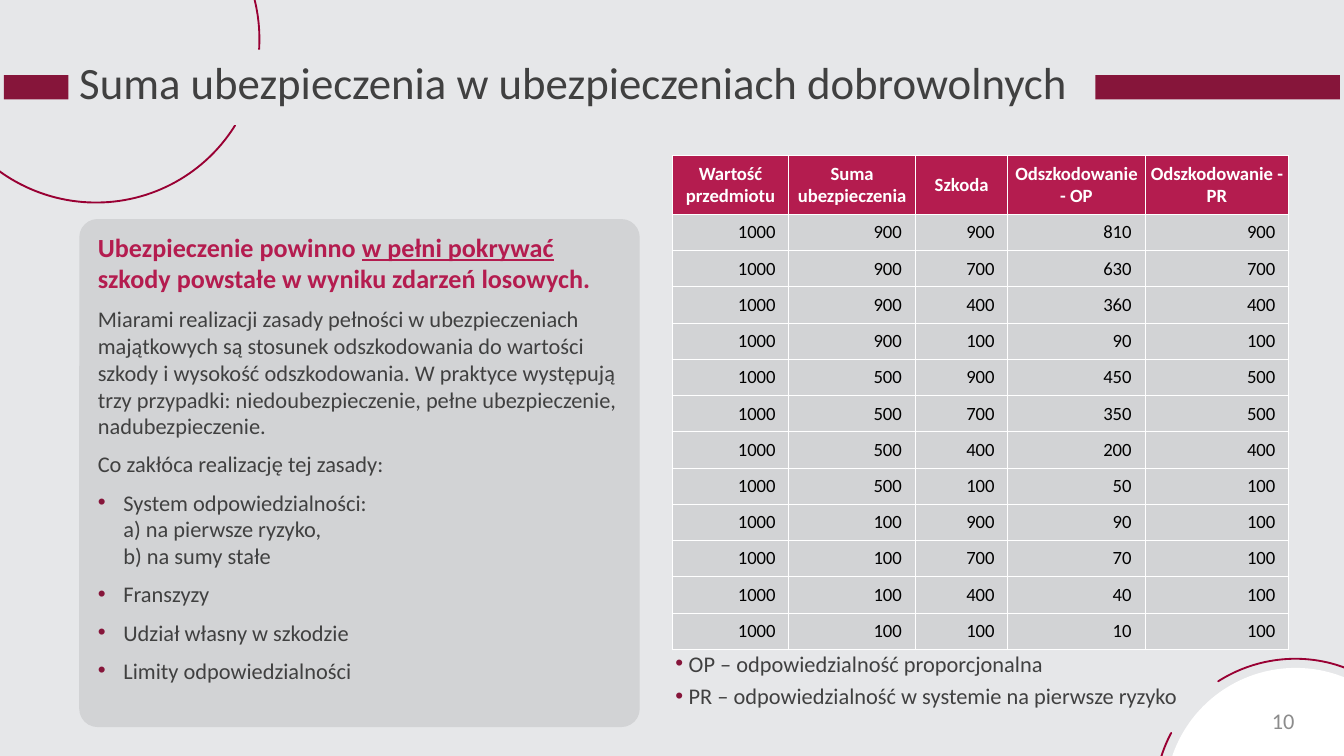
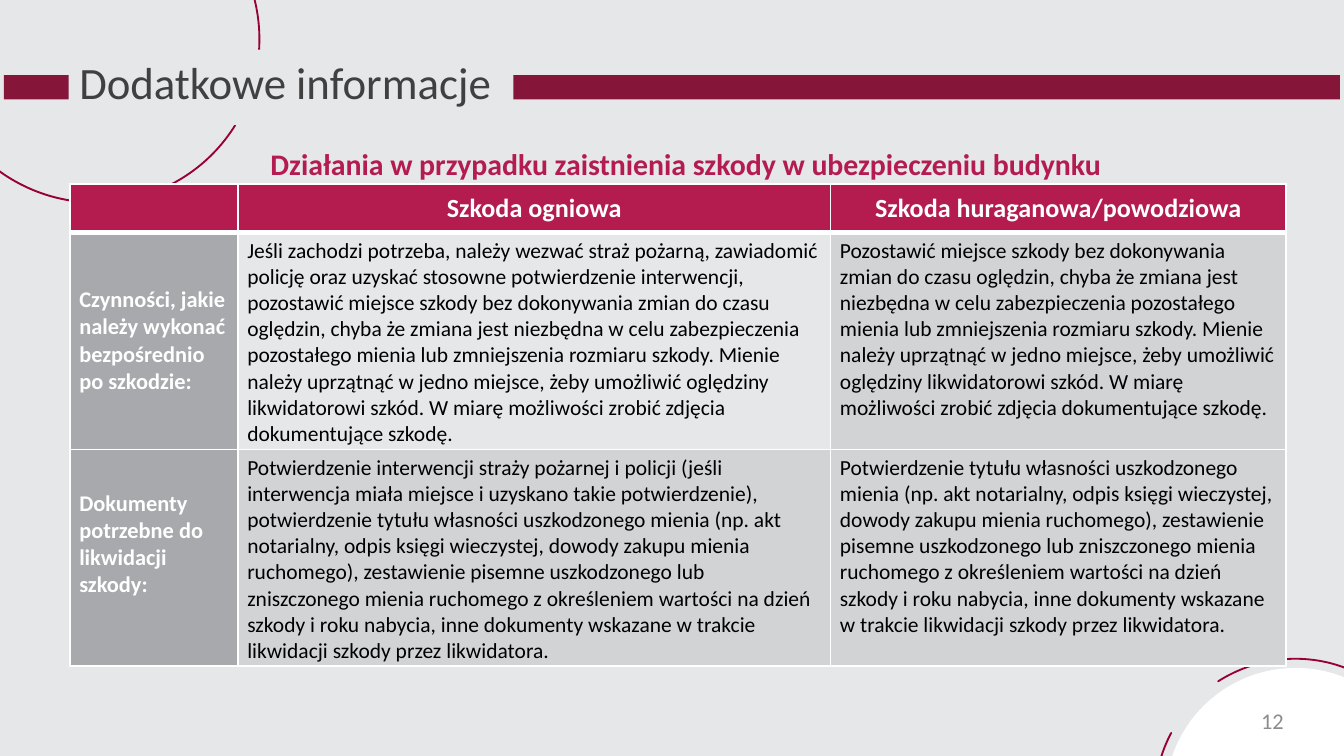
"""Build two insurance slides that share one theme and frame."""

from dataclasses import dataclass
from typing import Optional

from lxml.etree import SubElement
from pptx import Presentation
from pptx.dml.color import RGBColor
from pptx.enum.shapes import MSO_SHAPE
from pptx.enum.text import MSO_ANCHOR, PP_ALIGN
from pptx.oxml.ns import qn
from pptx.util import Inches, Pt

COLUMNS = 100
CELL = Inches(10) // COLUMNS
ROWS = 56.25


@dataclass(frozen=True)
class Theme:
    font: str = "Calibri"
    paper: str = "E6E7E9"
    panel: str = "D2D3D5"
    label: str = "A8A9AD"
    band: str = "86153A"
    ring: str = "990033"
    accent: str = "B41C4F"
    ink: str = "404040"
    black: str = "000000"
    white: str = "FFFFFF"
    muted: str = "8C8C8C"
    title_size: float = 24
    caption_size: float = 16
    lead_size: float = 14
    body_size: float = 12
    cell_size: float = 11.5
    figure_size: float = 10


THEME = Theme()


@dataclass(frozen=True)
class Place:
    left: float
    top: float
    width: float
    height: float

    def lengths(self) -> tuple[int, ...]:
        return tuple(grid(n) for n in (self.left, self.top, self.width, self.height))


@dataclass(frozen=True)
class Style:
    size: float
    color: str
    bold: bool = False
    underline: bool = False


@dataclass(frozen=True)
class Span:
    text: str
    style: Style


@dataclass(frozen=True)
class Para:
    spans: tuple[Span, ...]
    before: float = 0
    hanging: float = 0
    align: PP_ALIGN = PP_ALIGN.LEFT


@dataclass(frozen=True)
class Insets:
    left: float = 1
    top: float = 0.5
    right: float = 1
    bottom: float = 0.5


@dataclass(frozen=True)
class Figure:
    kind: MSO_SHAPE
    place: Place
    fill: Optional[str] = None
    line: Optional[str] = None
    turn: float = 0
    adjustments: tuple[float, ...] = ()


@dataclass(frozen=True)
class CellLook:
    style: Style
    fill: str
    align: PP_ALIGN = PP_ALIGN.LEFT
    anchor: MSO_ANCHOR = MSO_ANCHOR.MIDDLE
    insets: Insets = Insets()


@dataclass(frozen=True)
class Cell:
    text: str
    look: CellLook


@dataclass(frozen=True)
class Sheet:
    left: float
    top: float
    widths: tuple[float, ...]
    heights: tuple[float, ...]
    rows: tuple[tuple[Cell, ...], ...]
    line: float
    header_line: float


FRAME = (
    Figure(MSO_SHAPE.BLOCK_ARC, Place(-5.1, -9.3, 24.4, 24.5), THEME.band, THEME.ring, 12.3, (170.46, 1.76, 0)),
    Figure(MSO_SHAPE.BLOCK_ARC, Place(-5.1, -9.4, 24.4, 24.5), THEME.band, THEME.ring, 132.3, (155.79, 1.76, 0)),
    Figure(MSO_SHAPE.RECTANGLE, Place(0.3, 5.6, 99.4, 1.8), THEME.band),
    Figure(MSO_SHAPE.BLOCK_ARC, Place(85.9, 49.2, 21.1, 20.6), THEME.band, THEME.ring, 205.2, (170.46, 1.76, 0)),
    Figure(MSO_SHAPE.BLOCK_ARC, Place(85.6, 49.1, 21.1, 20.6), THEME.band, THEME.ring, 325.2, (163.48, 1.76, 0)),
    Figure(MSO_SHAPE.OVAL, Place(86.7, 49.7, 19.4, 19.4), THEME.white, turn=7),
)

TITLE = Style(THEME.title_size, THEME.ink)
NUMBER = Style(THEME.body_size, THEME.muted)
BODY = Style(THEME.body_size, THEME.ink)
LEAD = Style(THEME.lead_size, THEME.accent, bold=True)
LEAD_LINK = Style(THEME.lead_size, THEME.accent, bold=True, underline=True)
CAPTION = Style(THEME.caption_size, THEME.accent, bold=True)

FIGURE_HEAD = CellLook(Style(THEME.figure_size, THEME.white, True), THEME.accent,
                       PP_ALIGN.CENTER, insets=Insets(0.4, 0.5, 0.4, 0.5))
FIGURE = CellLook(Style(THEME.figure_size, THEME.black), THEME.panel,
                  PP_ALIGN.RIGHT, MSO_ANCHOR.BOTTOM)

SNUG = Insets(0.7, 0.4, 0.7, 0.4)
LABEL_STYLE = Style(THEME.body_size, THEME.white, True)
ADVICE_STYLE = Style(THEME.cell_size, THEME.black)
ADVICE_HEAD = CellLook(Style(THEME.lead_size, THEME.white, True), THEME.accent,
                       PP_ALIGN.CENTER, insets=Insets(0.7, 0, 0.7, 0))
LABEL = CellLook(LABEL_STYLE, THEME.label, insets=SNUG)
RAISED_LABEL = CellLook(LABEL_STYLE, THEME.label, insets=Insets(0.7, 0.4, 0.7, 2.4))
ADVICE = CellLook(ADVICE_STYLE, THEME.panel, anchor=MSO_ANCHOR.TOP, insets=SNUG)
PALE_ADVICE = CellLook(ADVICE_STYLE, THEME.paper, anchor=MSO_ANCHOR.TOP, insets=SNUG)

DAMAGES = (900, 700, 400, 100)
INSURED_SUMS = (900, 500, 100)
ITEM_VALUE = 1000


def grid(count: float) -> int:
    """Turn a count of grid columns or rows into a length."""
    return round(count * CELL)


def color(code: str) -> RGBColor:
    """Read a colour code."""
    return RGBColor.from_string(code)


def body_para(text: str, before: float = 6, hanging: float = 0) -> Para:
    """Make a paragraph in the body style."""
    return Para((Span(text, BODY),), before, hanging)


def add_bullet(para, hanging: float) -> None:
    """Give a paragraph a hanging bullet."""
    properties = para._p.get_or_add_pPr()
    properties.set("marL", str(grid(hanging)))
    properties.set("indent", str(-grid(hanging)))
    tint = SubElement(properties, qn("a:buClr"))
    SubElement(tint, qn("a:srgbClr"), val=THEME.band)
    SubElement(properties, qn("a:buFont"), typeface="Arial")
    SubElement(properties, qn("a:buChar"), char="•")


def add_span(para, span: Span) -> None:
    """Add a span, with a line break at each newline."""
    for index, text in enumerate(span.text.split("\n")):
        if index:
            para.add_line_break()
        run = para.add_run()
        run.text = text
        run.font.name = THEME.font
        run.font.size = Pt(span.style.size)
        run.font.bold = span.style.bold
        run.font.underline = span.style.underline
        run.font.color.rgb = color(span.style.color)


def write(frame, paras: tuple[Para, ...]) -> None:
    """Write paragraphs into a text frame."""
    for index, item in enumerate(paras):
        para = frame.add_paragraph() if index else frame.paragraphs[0]
        para.alignment = item.align
        para.space_before = Pt(item.before)
        if item.hanging:
            add_bullet(para, item.hanging)
        for span in item.spans:
            add_span(para, span)


def set_insets(target, insets: Insets) -> None:
    """Set the margins of a text frame or cell."""
    target.margin_left, target.margin_top = grid(insets.left), grid(insets.top)
    target.margin_right, target.margin_bottom = grid(insets.right), grid(insets.bottom)


def add_figure(page, figure: Figure):
    """Draw a preset shape."""
    box = page.shapes.add_shape(figure.kind, *figure.place.lengths())
    box.shadow.inherit = False
    box.rotation = figure.turn
    for index, value in enumerate(figure.adjustments):
        box.adjustments[index] = value
    if figure.fill:
        box.fill.solid()
        box.fill.fore_color.rgb = color(figure.fill)
    else:
        box.fill.background()
    if figure.line:
        box.line.color.rgb = color(figure.line)
        box.line.width = Pt(1)
    else:
        box.line.fill.background()
    return box


def add_text(page, figure: Figure, paras: tuple[Para, ...], insets: Insets = Insets()) -> None:
    """Draw a shape that holds text from its top."""
    frame = add_figure(page, figure).text_frame
    frame.word_wrap = True
    frame.vertical_anchor = MSO_ANCHOR.TOP
    set_insets(frame, insets)
    write(frame, paras)


def add_borders(cell, widths: dict[str, float]) -> None:
    """Draw white borders of the given widths on a cell."""
    properties = cell._tc.get_or_add_tcPr()
    for index, (side, width) in enumerate(widths.items()):
        line = SubElement(properties, qn(f"a:ln{side}"), w=str(Pt(width)))
        SubElement(SubElement(line, qn("a:solidFill")), qn("a:srgbClr"), val=THEME.white)
        properties.insert(index, line)


def add_sheet(page, sheet: Sheet) -> None:
    """Draw a table."""
    place = Place(sheet.left, sheet.top, sum(sheet.widths), sum(sheet.heights))
    table = page.shapes.add_table(len(sheet.rows), len(sheet.widths), *place.lengths()).table
    table.horz_banding = False
    for column, width in zip(table.columns, sheet.widths):
        column.width = grid(width)
    for index, (row, height, items) in enumerate(zip(table.rows, sheet.heights, sheet.rows)):
        row.height = grid(height)
        above = sheet.header_line if index == 1 else sheet.line
        below = sheet.header_line if index == 0 else sheet.line
        for cell, item in zip(row.cells, items):
            look = item.look
            cell.fill.solid()
            cell.fill.fore_color.rgb = color(look.fill)
            cell.vertical_anchor = look.anchor
            set_insets(cell, look.insets)
            add_borders(cell, {"L": sheet.line, "R": sheet.line, "T": above, "B": below})
            if item.text:
                write(cell.text_frame, (Para((Span(item.text, look.style),), align=look.align),))


def add_page(deck, title: str, title_width: float, number: str, number_left: float):
    """Add a page with the shared frame, title and number."""
    page = deck.slides.add_slide(deck.slide_layouts[6])
    page.background.fill.solid()
    page.background.fill.fore_color.rgb = color(THEME.paper)
    for figure in FRAME:
        add_figure(page, figure)
    box = page.shapes.add_textbox(*Place(number_left, 52.1, 13.8, 3).lengths())
    box.text_frame.word_wrap = True
    box.text_frame.vertical_anchor = MSO_ANCHOR.MIDDLE
    write(box.text_frame, (Para((Span(number, NUMBER),), align=PP_ALIGN.RIGHT),))
    plate = Figure(MSO_SHAPE.RECTANGLE, Place(5.1, 3.7, title_width, 5.6), THEME.paper)
    add_text(page, plate, (Para((Span(title, TITLE),)),), Insets(0.8, 0.4, 0.8, 1.2))
    return page


def compensation_rows() -> tuple[tuple[Cell, ...], ...]:
    """Work out compensation under both liability systems."""
    heads = ("Wartość przedmiotu", "Suma ubezpieczenia", "Szkoda", "Odszkodowanie - OP", "Odszkodowanie - PR")
    rows = [tuple(Cell(head, FIGURE_HEAD) for head in heads)]
    for insured in INSURED_SUMS:
        for damage in DAMAGES:
            values = (ITEM_VALUE, insured, damage, damage * insured // ITEM_VALUE, min(damage, insured))
            rows.append(tuple(Cell(str(value), FIGURE) for value in values))
    return tuple(rows)


def build_sums(deck) -> None:
    """Build the page on insured sums."""
    page = add_page(deck, "Suma ubezpieczenia w ubezpieczeniach dobrowolnych", 76.4, "10", 83.5)
    lead = Para((Span("Ubezpieczenie powinno ", LEAD), Span("w pełni pokrywać ", LEAD_LINK),
                 Span("szkody powstałe w wyniku zdarzeń losowych.", LEAD)), 3)
    factors = ("System odpowiedzialności:\na) na pierwsze ryzyko,\nb) na sumy stałe",
               "Franszyzy", "Udział własny w szkodzie", "Limity odpowiedzialności")
    panel = Figure(MSO_SHAPE.ROUNDED_RECTANGLE, Place(5.9, 16.3, 41.7, 37.8), THEME.panel, adjustments=(0.036,))
    add_text(page, panel, (
        lead,
        body_para("Miarami realizacji zasady pełności w ubezpieczeniach majątkowych są stosunek odszkodowania do wartości szkody i wysokość odszkodowania. W praktyce występują trzy przypadki: niedoubezpieczenie, pełne ubezpieczenie, nadubezpieczenie."),
        body_para("Co zakłóca realizację tej zasady:"),
        *(body_para(factor, hanging=1.9) for factor in factors)))
    rows = compensation_rows()
    heights = (3.9,) + (2.7,) * (len(rows) - 1)
    add_sheet(page, Sheet(50, 11.6, (8.7, 9.4, 6.9, 10.2, 10.7), heights, rows, 0.5, 0.5))
    legend = Figure(MSO_SHAPE.ROUNDED_RECTANGLE, Place(49.2, 47.8, 41.7, 6.3), adjustments=(0.036,))
    add_text(page, legend, (body_para("OP – odpowiedzialność proporcjonalna", 6, 1),
                            body_para("PR – odpowiedzialność w systemie na pierwsze ryzyko", 3, 1)))


def build_advice(deck) -> None:
    """Build the page on what to do after damage."""
    page = add_page(deck, "Dodatkowe informacje", 33.1, "12", 82.7)
    caption = Figure(MSO_SHAPE.ROUNDED_RECTANGLE, Place(18.5, 9.7, 80.3, 14.2), adjustments=(0.156,))
    add_text(page, caption, (Para((Span("Działania w przypadku zaistnienia szkody w ubezpieczeniu budynku", CAPTION),), 3),))
    keep = "ozostawić miejsce szkody bez dokonywania zmian do czasu oględzin, chyba że zmiana jest niezbędna w celu zabezpieczenia pozostałego mienia lub zmniejszenia rozmiaru szkody. Mienie należy uprzątnąć w jedno miejsce, żeby umożliwić oględziny likwidatorowi szkód. W miarę możliwości zrobić zdjęcia dokumentujące szkodę."
    proof = "otwierdzenie tytułu własności uszkodzonego mienia (np. akt notarialny, odpis księgi wieczystej, dowody zakupu mienia ruchomego), zestawienie pisemne uszkodzonego lub zniszczonego mienia ruchomego z określeniem wartości na dzień szkody i roku nabycia, inne dokumenty wskazane w trakcie likwidacji szkody przez likwidatora."
    call = "Jeśli zachodzi potrzeba, należy wezwać straż pożarną, zawiadomić policję oraz uzyskać stosowne potwierdzenie interwencji, p"
    report = "Potwierdzenie interwencji straży pożarnej i policji (jeśli interwencja miała miejsce i uzyskano takie potwierdzenie), p"
    rows = (
        tuple(Cell(head, ADVICE_HEAD) for head in ("", "Szkoda ogniowa", "Szkoda huraganowa/powodziowa")),
        (Cell("Czynności, jakie należy wykonać bezpośrednio po szkodzie:", LABEL),
         Cell(call + keep, PALE_ADVICE), Cell("P" + keep, ADVICE)),
        (Cell("Dokumenty potrzebne do likwidacji szkody:", RAISED_LABEL),
         Cell(report + proof, ADVICE), Cell("P" + proof, ADVICE)),
    )
    sheet = Sheet(5.2, 13.7, (12.5, 44.1, 33.9), (3.6, 16.1, 16), rows, 1, 3)
    add_sheet(page, sheet)


def main() -> None:
    """Build and save the deck."""
    deck = Presentation()
    deck.slide_width, deck.slide_height = grid(COLUMNS), grid(ROWS)
    build_sums(deck)
    build_advice(deck)
    deck.save("out.pptx")


if __name__ == "__main__":
    main()
